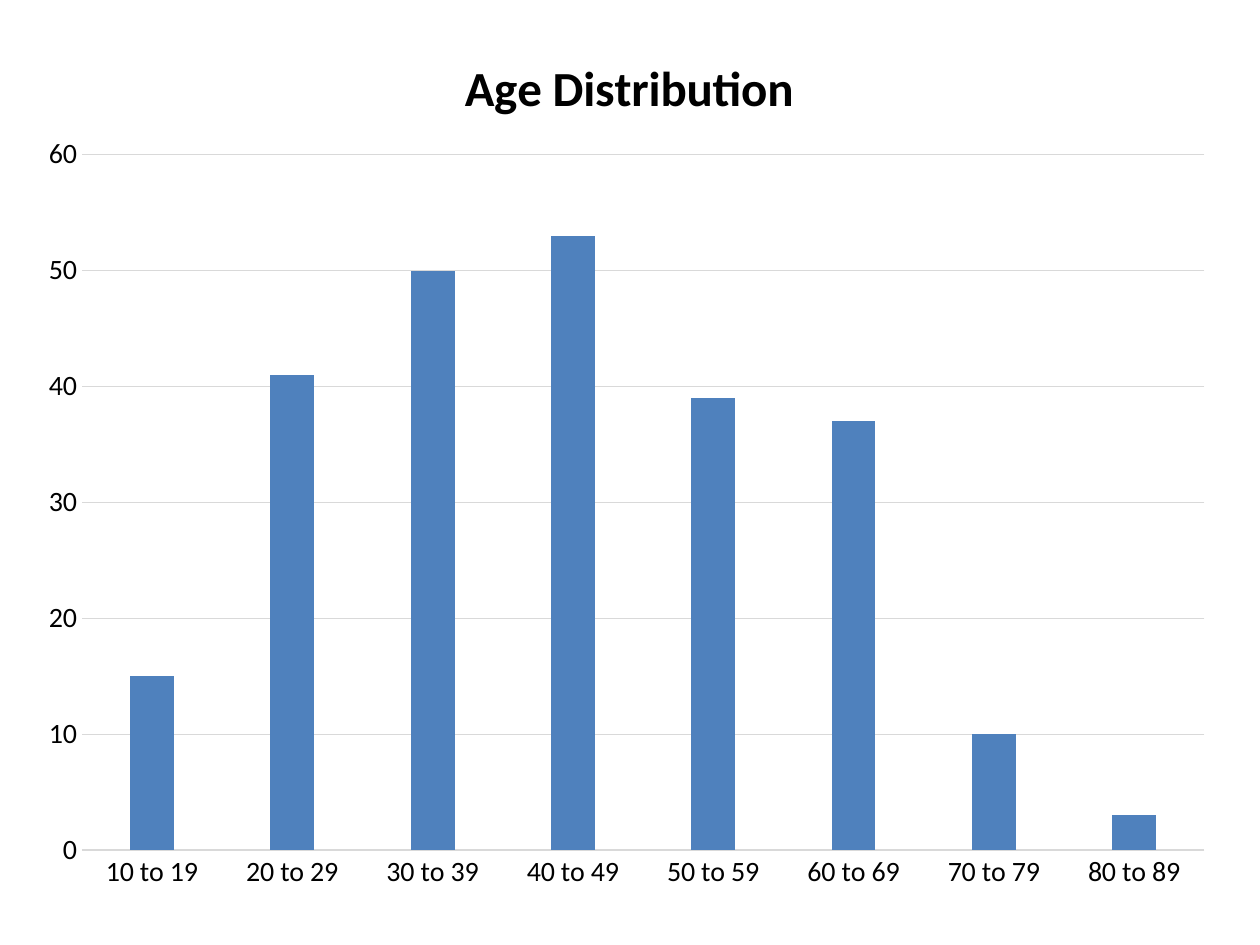
import pptx
import pptx.chart.data
import pptx.dml.color
import pptx.enum.chart
import pptx.oxml
import pptx.oxml.ns
import pptx.util

Pt = pptx.util.Pt

TITLE = "Age Distribution"
SERIES_NAME = "Series 1"
AGE_COUNTS = {
    "10 to 19": 15,
    "20 to 29": 41,
    "30 to 39": 50,
    "40 to 49": 53,
    "50 to 59": 39,
    "60 to 69": 37,
    "70 to 79": 10,
    "80 to 89": 3,
}

THEME = {
    "font": "Calibri",
    "text": "000000",
    "bar": "4F81BD",
    "line": "D9D9D9",
    "title_size": 28,
    "axis_size": 16,
    "line_width": 0.75,
}

SLIDE_SIZE = (720, 540)
CHART_BOX = (12.24, 5.76, 689.76, 516.24)
# Fractions of the chart's width and height
TITLE_LAYOUT = {"x": 0.36, "y": 0.04}
PLOT_LAYOUT = {"x": 0.05, "y": 0.16, "w": 0.93, "h": 0.77}


def color(name):
    return pptx.dml.color.RGBColor.from_string(THEME[name])


def style_font(font, size, bold=False):
    font.name = THEME["font"]
    font.size = Pt(size)
    font.bold = bold
    font.color.rgb = color("text")


def style_line(line):
    line.color.rgb = color("line")
    line.width = Pt(THEME["line_width"])


def set_layout(element, position, fractions, target=""):
    """Give a chart part a manual layout, as its child number `position`."""
    for old_layout in element.findall(pptx.oxml.ns.qn("c:layout")):
        element.remove(old_layout)
    modes = "".join(f'<c:{key}Mode val="edge"/>' for key in "xy")
    values = "".join(f'<c:{key} val="{value}"/>' for key, value in fractions.items())
    element.insert(position, pptx.oxml.parse_xml(
        f'<c:layout {pptx.oxml.ns.nsdecls("c")}><c:manualLayout>'
        f"{target}{modes}{values}</c:manualLayout></c:layout>"))


def style_axes(chart):
    no_ticks = pptx.enum.chart.XL_TICK_MARK.NONE
    for axis in (chart.category_axis, chart.value_axis):
        axis.major_tick_mark = no_ticks
        axis.minor_tick_mark = no_ticks
        style_font(axis.tick_labels.font, THEME["axis_size"])
    style_line(chart.category_axis.format.line)
    value_axis = chart.value_axis
    value_axis.format.line.fill.background()
    value_axis.minimum_scale = 0
    value_axis.maximum_scale = 60
    value_axis.major_unit = 10
    value_axis.has_major_gridlines = True
    style_line(value_axis.major_gridlines.format.line)


def add_age_chart(slide):
    data = pptx.chart.data.CategoryChartData()
    data.categories = list(AGE_COUNTS)
    data.add_series(SERIES_NAME, list(AGE_COUNTS.values()))
    chart = slide.shapes.add_chart(
        pptx.enum.chart.XL_CHART_TYPE.COLUMN_CLUSTERED,
        *map(Pt, CHART_BOX), data).chart
    chart.has_legend = False
    style_font(chart.font, 10)

    chart.has_title = True
    title = chart.chart_title
    title.text_frame.text = TITLE
    style_font(title.text_frame.paragraphs[0].runs[0].font,
               THEME["title_size"], bold=True)
    title.include_in_layout = False

    plot = chart.plots[0]
    plot.vary_by_categories = False
    plot.gap_width = 219
    plot.overlap = -27
    bars = plot.series[0].format.fill
    bars.solid()
    bars.fore_color.rgb = color("bar")

    style_axes(chart)
    chart_element = chart.element.chart
    set_layout(chart_element.find(pptx.oxml.ns.qn("c:title")), 1, TITLE_LAYOUT)
    set_layout(chart_element.plotArea, 0, PLOT_LAYOUT,
               '<c:layoutTarget val="inner"/>')


def main():
    presentation = pptx.Presentation()
    presentation.slide_width, presentation.slide_height = map(Pt, SLIDE_SIZE)
    slide = presentation.slides.add_slide(presentation.slide_layouts[6])
    add_age_chart(slide)
    presentation.save("out.pptx")


if __name__ == "__main__":
    main()
